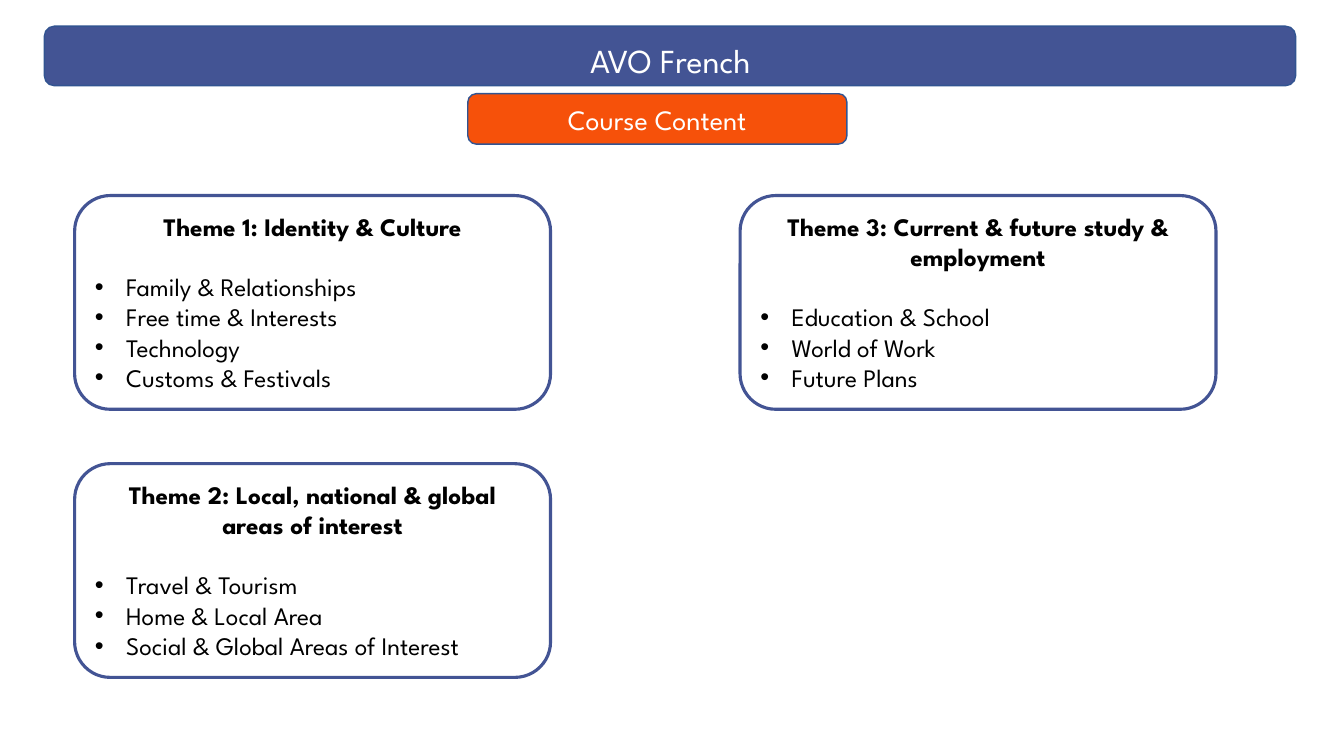
from dataclasses import dataclass

from lxml.etree import SubElement
from pptx import Presentation
from pptx.dml.color import RGBColor
from pptx.enum.shapes import MSO_SHAPE
from pptx.enum.text import MSO_ANCHOR, MSO_AUTO_SIZE, PP_ALIGN
from pptx.oxml.ns import qn
from pptx.util import Pt

EMU_PER_PX = 9144  # 100 px to the inch


@dataclass(frozen=True)
class Theme:
    font: str = "League Spartan"
    navy: str = "435494"
    edge: str = "325491"
    orange: str = "F6510A"
    white: str = "FFFFFF"
    black: str = "000000"
    title: int = 24
    subtitle: int = 20
    body: int = 18
    thin: float = 1
    thick: float = 2.25
    heading_gap: float = 21.6


T = Theme()

THEMES = [  # column, row, heading, topics
    (0, 0, "Theme 1: Identity & Culture",
     ["Family & Relationships", "Free time & Interests", "Technology", "Customs & Festivals"]),
    (0, 1, "Theme 2: Local, national & global areas of interest",
     ["Travel & Tourism", "Home & Local Area", "Social & Global Areas of Interest"]),
    (1, 0, "Theme 3: Current & future study & employment",
     ["Education & School", "World of Work", "Future Plans"]),
]


def px(n):
    return n * EMU_PER_PX


def rounded_box(s, box, fill=None, line=T.navy, width=T.thick):
    sp = s.shapes.add_shape(MSO_SHAPE.ROUNDED_RECTANGLE, *map(px, box))
    sp.shadow.inherit = False
    if fill:
        sp.fill.solid()
        sp.fill.fore_color.rgb = RGBColor.from_string(fill)
    else:
        sp.fill.background()
    sp.line.color.rgb = RGBColor.from_string(line)
    sp.line.width = Pt(width)
    return sp


def write(p, text, size=T.body, color=T.black, bold=False, align=PP_ALIGN.CENTER, after=0):
    p.alignment = align
    p.space_after = Pt(after)
    r = p.add_run()
    r.text = text
    r.font.name = T.font
    r.font.size = Pt(size)
    r.font.bold = bold
    r.font.color.rgb = RGBColor.from_string(color)


def add_bullet(p, indent):
    pPr = p._p.get_or_add_pPr()
    pPr.set("marL", str(px(indent)))
    pPr.set("indent", str(-px(indent)))
    SubElement(pPr, qn("a:buFont"), typeface="Arial")
    SubElement(pPr, qn("a:buChar"), char="•")


def title_banner(s, box, text):
    x, y, w, h = box
    banner = rounded_box(s, box, fill=T.navy, line=T.edge, width=T.thin)
    title = s.shapes.title
    title._element.addprevious(banner._element)
    title.left, title.top, title.width, title.height = map(px, (x + 44, y + 9, w - 87, h - 9))
    tf = title.text_frame
    tf.auto_size = MSO_AUTO_SIZE.NONE
    tf.vertical_anchor = MSO_ANCHOR.TOP
    write(tf.paragraphs[0], text, size=T.title, color=T.white)


def subtitle_pill(s, box, text):
    sp = rounded_box(s, box, fill=T.orange, line=T.edge, width=T.thin)
    sp.text_frame.vertical_anchor = MSO_ANCHOR.MIDDLE
    write(sp.text_frame.paragraphs[0], text, size=T.subtitle, color=T.white)


def theme_card(s, box, heading, topics):
    tf = rounded_box(s, box).text_frame
    tf.word_wrap = True
    tf.vertical_anchor = MSO_ANCHOR.TOP
    write(tf.paragraphs[0], heading, bold=True, after=T.heading_gap)
    for topic in topics:
        p = tf.add_paragraph()
        write(p, topic, align=PP_ALIGN.LEFT)
        add_bullet(p, 31)


def theme_grid(s, box):
    x, y, w, h = box
    card_w, card_h = 472, 212
    for col, row, heading, topics in THEMES:
        card = (x + col * (w - card_w), y + row * (h - card_h), card_w, card_h)
        theme_card(s, card, heading, topics)


def main():
    prs = Presentation()
    prs.slide_width, prs.slide_height = px(1333), px(750)
    s = prs.slides.add_slide(prs.slide_layouts[5])
    title_banner(s, (44, 26, 1241, 59), "AVO French")
    subtitle_pill(s, (464, 93, 376, 50), "Course Content")
    theme_grid(s, (74, 194, 1132, 478))
    prs.save("out.pptx")


if __name__ == "__main__":
    main()
